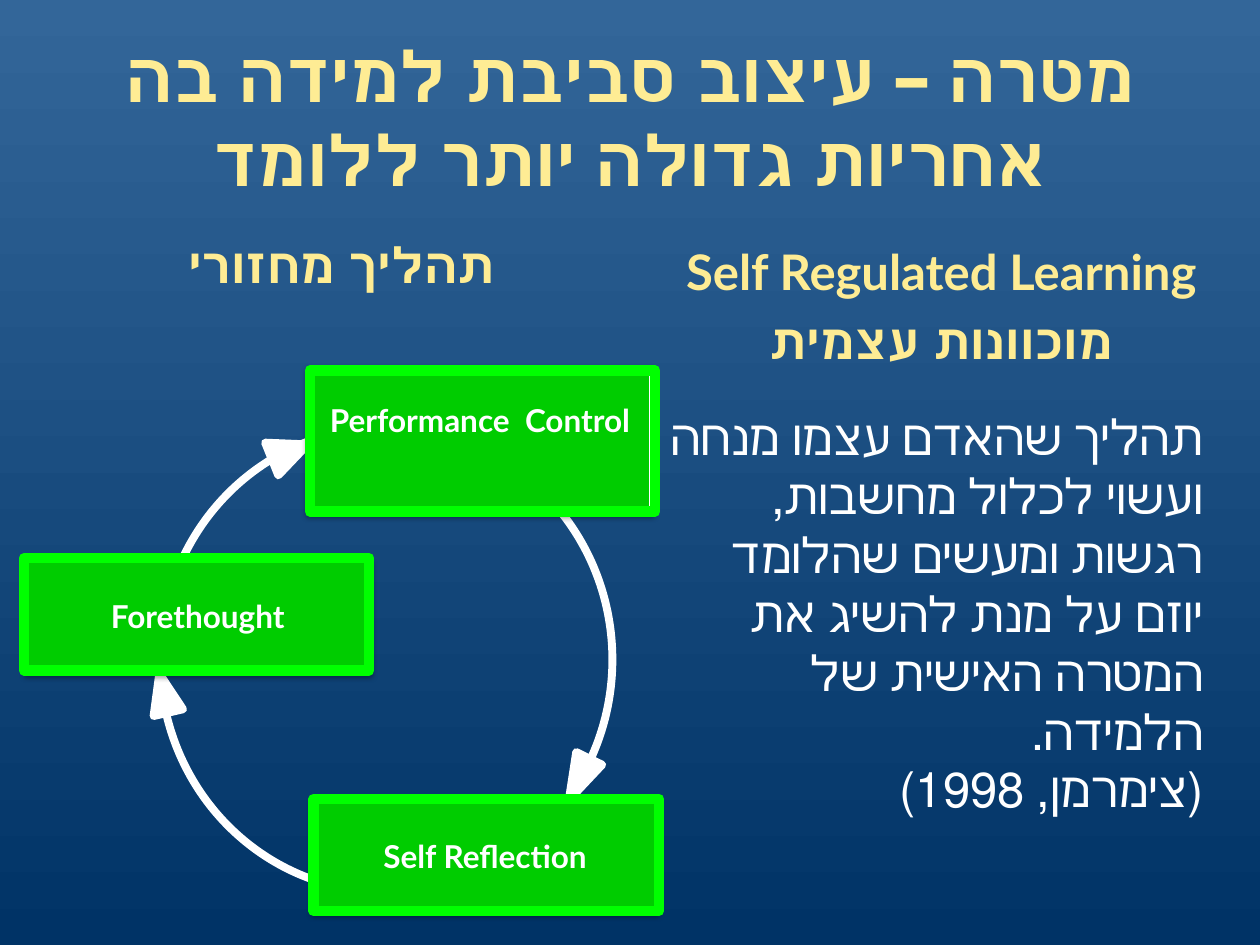
from dataclasses import dataclass

from lxml import etree
from pptx import Presentation
from pptx.dml.color import RGBColor
from pptx.enum.shapes import MSO_SHAPE
from pptx.enum.text import MSO_ANCHOR, MSO_AUTO_SIZE, PP_ALIGN
from pptx.oxml.ns import qn
from pptx.util import Inches, Pt

RECTANGLE, ELLIPSE = MSO_SHAPE.RECTANGLE, MSO_SHAPE.OVAL
TRIANGLE = MSO_SHAPE.ISOSCELES_TRIANGLE
TOP, MIDDLE, BOTTOM = MSO_ANCHOR.TOP, MSO_ANCHOR.MIDDLE, MSO_ANCHOR.BOTTOM
CENTER, RIGHT = PP_ALIGN.CENTER, PP_ALIGN.RIGHT
NO_AUTOFIT = MSO_AUTO_SIZE.NONE
TITLE_ONLY = 5
COLUMNS, ROWS = 100, 75


@dataclass(frozen=True)
class Theme:
    font: str = "Lato"
    sky: str = "336699"
    deep: str = "003366"
    heading: str = "FEEC94"
    white: str = "FFFFFF"
    box: str = "00CC00"
    frame: str = "00FF00"
    shadow: str = "000000"
    title_size: int = 40
    text_size: int = 28
    label_size: int = 18
    ring_width: float = 4.5
    box_width: float = 3
    frame_width: float = 6


class SlideBuilder:
    def __init__(self, deck, theme):
        self.theme = theme
        self.column = deck.slide_width / COLUMNS
        self.row = deck.slide_height / ROWS
        self.page = deck.slides.add_slide(deck.slide_layouts[TITLE_ONLY])

    def place(self, left, top, width, height):
        return (round(left * self.column), round(top * self.row),
                round(width * self.column), round(height * self.row))

    def background(self):
        fill = self.page.background.fill
        fill.gradient()
        fill.gradient_angle = 270
        for stop, color in zip(fill.gradient_stops, (self.theme.sky, self.theme.deep)):
            stop.color.rgb = RGBColor.from_string(color)

    def set_text(self, shape, lines, size, color, bold=True, anchor=MIDDLE,
                 align=CENTER, rtl=True, before=0):
        frame = shape.text_frame
        frame.text = "\n".join(lines)
        frame.word_wrap = True
        frame.auto_size = NO_AUTOFIT
        frame.vertical_anchor = anchor
        for para in frame.paragraphs:
            para.alignment = align
            para.space_before = Pt(before)
            if rtl:
                para._p.get_or_add_pPr().set("rtl", "1")
            for span in para.runs:
                span.font.name = self.theme.font
                span.font.size = Pt(size)
                span.font.bold = bold
                span.font.color.rgb = RGBColor.from_string(color)

    def title(self, text, area):
        shape = self.page.shapes.title
        shape.left, shape.top, shape.width, shape.height = self.place(*area)
        self.set_text(shape, [text], self.theme.title_size, self.theme.heading)

    def text(self, lines, area, color, **style):
        shape = self.page.shapes.add_textbox(*self.place(*area))
        size = self.theme.text_size
        self.set_text(shape, lines, size, color, before=size * 0.2, **style)
        return shape

    def shape(self, kind, area, line, width, fill=None, rotation=0):
        shape = self.page.shapes.add_shape(kind, *self.place(*area))
        shape.shadow.inherit = False
        shape.rotation = rotation
        shape.line.color.rgb = RGBColor.from_string(line)
        shape.line.width = Pt(width)
        if fill:
            shape.fill.solid()
            shape.fill.fore_color.rgb = RGBColor.from_string(fill)
        else:
            shape.fill.background()
        return shape

    def ring(self, area):
        self.shape(ELLIPSE, area, self.theme.white, self.theme.ring_width)

    def arrowhead(self, area, rotation):
        white = self.theme.white
        self.shape(TRIANGLE, area, white, self.theme.ring_width, white, rotation)

    def step(self, label, area, anchor, inset):
        theme = self.theme
        shape = self.shape(RECTANGLE, area, theme.white, theme.box_width, theme.box)
        self.set_text(shape, [label], theme.label_size, theme.white,
                      anchor=anchor, rtl=False)
        shape.text_frame.margin_top = Inches(inset)
        self.drop_shadow(shape)

    def drop_shadow(self, shape):
        effects = shape._element.spPr.find(qn("a:effectLst"))
        shadow = etree.SubElement(effects, qn("a:outerShdw"), blurRad=str(Pt(3.1)),
                                  dist=str(Pt(1.6)), dir="5400000", rotWithShape="0")
        color = etree.SubElement(shadow, qn("a:srgbClr"), val=self.theme.shadow)
        etree.SubElement(color, qn("a:alpha"), val="38000")

    def outline(self, area):
        self.shape(RECTANGLE, area, self.theme.frame, self.theme.frame_width)


def main():
    deck = Presentation()
    deck.slide_width, deck.slide_height = Inches(10), Inches(7.5)
    theme = Theme()
    slide = SlideBuilder(deck, theme)
    slide.background()
    slide.title("מטרה – עיצוב סביבת למידה בה אחריות גדולה יותר ללומד", (5, 3, 90, 12.5))

    slide.text(["Self Regulated Learning", "מוכוונות עצמית"],
               (49.4, 22.8, 50.6, 7), theme.heading, anchor=BOTTOM)
    definition = slide.text(
        ["תהליך שהאדם עצמו מנחה ועשוי לכלול מחשבות, רגשות ומעשים "
         "שהלומד יוזם על מנת להשיג את המטרה האישית של הלמידה.",
         "(צימרמן, 1998)"],
        (50.8, 31.8, 45.7, 40.8), theme.white, bold=False, anchor=TOP, align=RIGHT)
    definition.text_frame.paragraphs[-1].line_spacing = 0.8
    slide.text(["תהליך מחזורי"], (5, 16.8, 44.2, 7), theme.heading, anchor=BOTTOM)

    slide.ring((12.7, 33.9, 35.9, 36.9))
    for area, rotation in (((21.6, 34.3, 2.8, 3.1), 68),
                           ((44.8, 60, 2.3, 3.7), 206),
                           ((11.8, 53.4, 2.4, 3.2), 347)):
        slide.arrowhead(area, rotation)

    for label, left, top, height, anchor, inset in (
            ("Performance  Control", 24.5, 29.3, 11.3, TOP, 0.25),
            ("Self Reflection", 24.9, 63.5, 8.8, MIDDLE, 0.05),
            ("Forethought", 2.1, 44.5, 8.8, MIDDLE, 0.05)):
        slide.step(label, (left, top, 27.2, height), anchor, inset)
    for left, top, height in ((1.9, 44.3, 8.9), (24.6, 29.4, 11.2), (24.9, 63.4, 8.9)):
        slide.outline((left, top, 27.4, height))

    deck.save("out.pptx")


if __name__ == "__main__":
    main()
